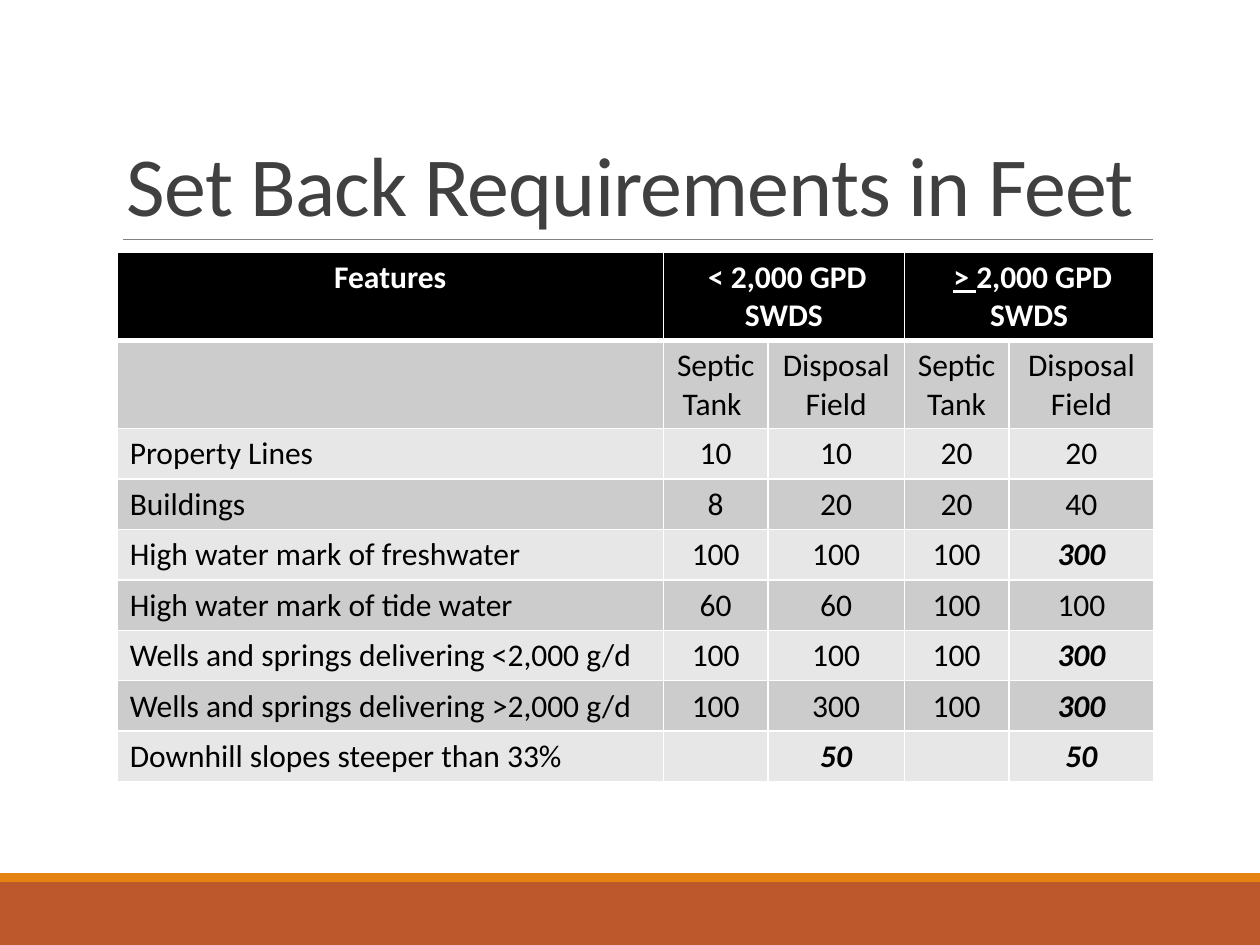
from dataclasses import dataclass

from lxml import etree
from pptx import Presentation
from pptx.dml.color import RGBColor
from pptx.enum.shapes import MSO_CONNECTOR, MSO_SHAPE
from pptx.enum.text import MSO_ANCHOR, PP_ALIGN
from pptx.oxml.ns import qn
from pptx.util import Inches, Pt

STRAIGHT = MSO_CONNECTOR.STRAIGHT
RECTANGLE = MSO_SHAPE.RECTANGLE
BOTTOM = MSO_ANCHOR.BOTTOM
LEFT, CENTER = PP_ALIGN.LEFT, PP_ALIGN.CENTER


@dataclass(frozen=True)
class Theme:
    font: str = "Calibri"
    title_size: int = 48
    table_size: int = 18
    title: str = "404040"
    rule: str = "808080"
    footer: str = "BD582C"
    footer_edge: str = "E48312"
    header: str = "000000"
    header_text: str = "FFFFFF"
    body_text: str = "000000"
    border: str = "FFFFFF"
    bands: tuple = ("CCCCCC", "E7E7E7")


THEME = Theme()

HEADERS = {
    0: [("Features", False)],
    1: [(" < 2,000 GPD SWDS", False)],
    3: [(" ", False), ("> ", True), ("2,000 GPD SWDS", False)],
}
SETBACKS = [
    ("", "Septic Tank ", "Disposal Field", "Septic Tank", "Disposal Field"),
    ("Property Lines", "10", "10", "20", "20"),
    ("Buildings", "8", "20", "20", "40"),
    ("High water mark of freshwater", "100", "100", "100", "300"),
    ("High water mark of tide water", "60", "60", "100", "100"),
    ("Wells and springs delivering <2,000 g/d", "100", "100", "100", "300"),
    ("Wells and springs delivering >2,000 g/d", "100", "300", "100", "300"),
    ("Downhill slopes steeper than 33%", "", "50", "", "50"),
]
EMPHASISED = {(4, 4), (6, 4), (7, 4), (8, 2), (8, 4)}
COLUMN_WIDTHS = (4.33, 0.83, 1.08, 0.83, 1.15)
TWO_LINE_ROW, ONE_LINE_ROW = 0.7, 0.4


def add_text(paragraph, text, *, size, color, align=LEFT, bold=False,
             italic=False, underline=False, spacing=None):
    paragraph.alignment = align
    run = paragraph.add_run()
    run.text = text
    font = run.font
    font.name, font.size = THEME.font, Pt(size)
    font.color.rgb = RGBColor.from_string(color)
    font.bold, font.italic, font.underline = bold, italic, underline
    if spacing is not None:
        run._r.get_or_add_rPr().set("spc", str(int(spacing * 100)))


def add_band(slide, left, top, width, height, color):
    band = slide.shapes.add_shape(
        RECTANGLE, Inches(left), Inches(top), Inches(width), Inches(height))
    band.shadow.inherit = False
    band.fill.solid()
    band.fill.fore_color.rgb = RGBColor.from_string(color)
    band.line.fill.background()


def add_footer(slide, left, top, width, height):
    edge = 0.07
    add_band(slide, left, top + edge, width, height - edge, THEME.footer)
    add_band(slide, left, top, width, edge, THEME.footer_edge)


def add_title(slide, left, top, width, height):
    bottom = top + height
    rule = slide.shapes.add_connector(
        STRAIGHT, Inches(left + 0.07), Inches(bottom),
        Inches(left + width), Inches(bottom))
    rule.line.color.rgb = RGBColor.from_string(THEME.rule)
    rule.line.width = Pt(0.5)
    etree.SubElement(rule._element.spPr, qn("a:effectLst"))

    title = slide.shapes.add_textbox(
        Inches(left), Inches(top), Inches(width), Inches(height))
    frame = title.text_frame
    frame.word_wrap = True
    frame.vertical_anchor = BOTTOM
    paragraph = frame.paragraphs[0]
    paragraph.line_spacing = 0.85
    add_text(paragraph, "Set Back Requirements in Feet",
             size=THEME.title_size, color=THEME.title, spacing=-0.5)


def style_cell(cell, fill, top_border=1, bottom_border=1):
    properties = cell._tc.get_or_add_tcPr()
    borders = {"L": 1, "R": 1, "T": top_border, "B": bottom_border}
    for side, width in borders.items():
        line = etree.SubElement(properties, qn(f"a:ln{side}"), w=str(Pt(width)))
        solid = etree.SubElement(line, qn("a:solidFill"))
        etree.SubElement(solid, qn("a:srgbClr"), val=THEME.border)
    cell.fill.solid()
    cell.fill.fore_color.rgb = RGBColor.from_string(fill)


def add_setback_table(slide, left, top, width, height):
    table = slide.shapes.add_table(
        len(SETBACKS) + 1, len(COLUMN_WIDTHS),
        Inches(left), Inches(top), Inches(width), Inches(height)).table
    scale = width / sum(COLUMN_WIDTHS)
    for column, column_width in zip(table.columns, COLUMN_WIDTHS):
        column.width = Inches(column_width * scale)
    for index, row in enumerate(table.rows):
        row.height = Inches(TWO_LINE_ROW if index < 2 else ONE_LINE_ROW)

    for column in range(len(COLUMN_WIDTHS)):
        style_cell(table.cell(0, column), THEME.header, bottom_border=3)
    for column, runs in HEADERS.items():
        cell = table.cell(0, column)
        if column:
            cell.merge(table.cell(0, column + 1))
        for text, underline in runs:
            add_text(cell.text_frame.paragraphs[0], text,
                     size=THEME.table_size, color=THEME.header_text,
                     align=CENTER, bold=True, underline=underline)

    for row, setbacks in enumerate(SETBACKS, start=1):
        for column, text in enumerate(setbacks):
            cell = table.cell(row, column)
            style_cell(cell, THEME.bands[(row - 1) % 2],
                       top_border=3 if row == 1 else 1)
            if text:
                strong = (row, column) in EMPHASISED
                add_text(cell.text_frame.paragraphs[0], text,
                         size=THEME.table_size, color=THEME.body_text,
                         align=CENTER if column else LEFT,
                         bold=strong, italic=strong)


def main():
    presentation = Presentation()
    presentation.slide_width = Inches(10)
    presentation.slide_height = Inches(7.5)
    slide = presentation.slides.add_slide(presentation.slide_layouts[6])
    add_footer(slide, 0, 6.93, 10, 0.57)
    add_title(slide, 0.91, 0.57, 8.24, 1.33)
    add_setback_table(slide, 0.93, 2, 8.23, 4.24)
    presentation.save("out.pptx")


if __name__ == "__main__":
    main()
